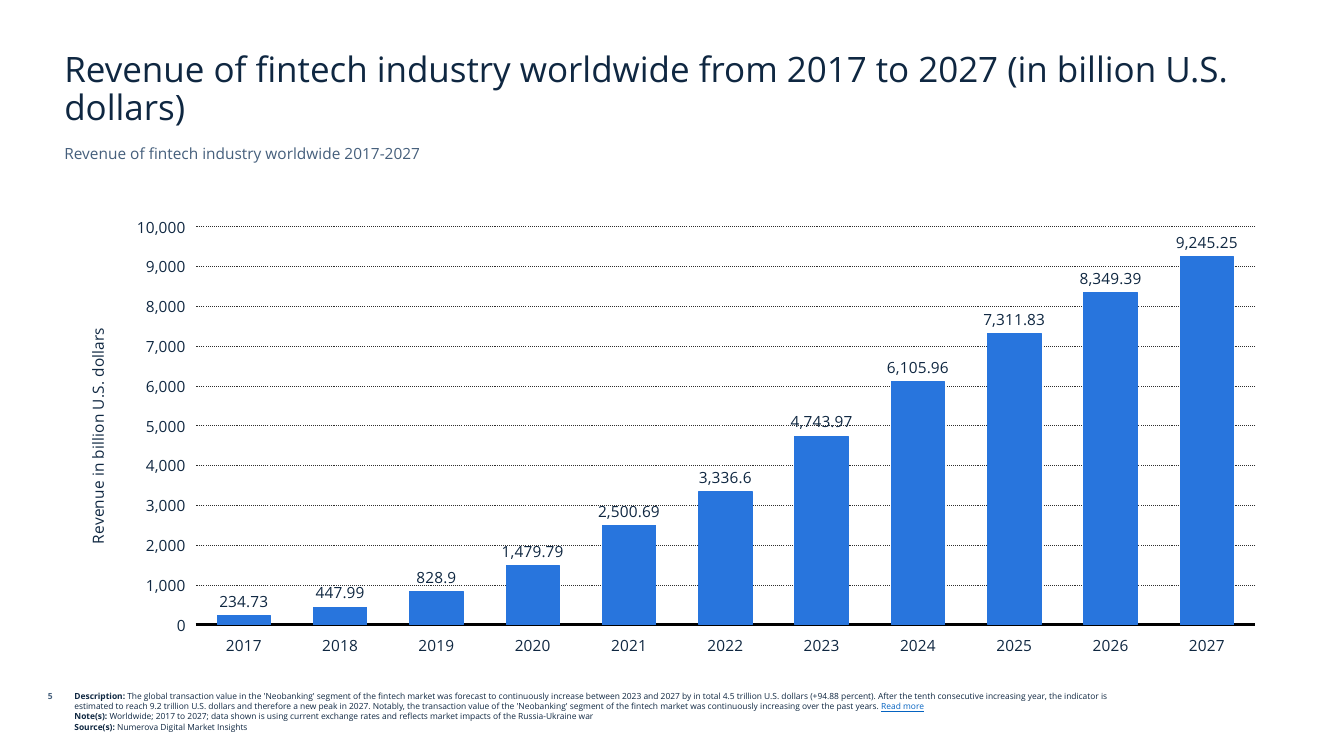
from dataclasses import dataclass

from lxml import etree
from pptx import Presentation
from pptx.chart.data import CategoryChartData
from pptx.dml.color import RGBColor
from pptx.enum.chart import XL_CHART_TYPE, XL_LABEL_POSITION, XL_TICK_LABEL_POSITION, XL_TICK_MARK
from pptx.enum.dml import MSO_LINE
from pptx.enum.text import MSO_ANCHOR, PP_ALIGN
from pptx.oxml.ns import qn
from pptx.util import Inches, Pt

COLUMN = XL_CHART_TYPE.COLUMN_CLUSTERED
OUTSIDE_END = XL_LABEL_POSITION.OUTSIDE_END
LABELS_LOW = XL_TICK_LABEL_POSITION.LOW
NO_TICK = XL_TICK_MARK.NONE
DOTTED = MSO_LINE.ROUND_DOT
TOP, BOTTOM = MSO_ANCHOR.TOP, MSO_ANCHOR.BOTTOM
LEFT, RIGHT = PP_ALIGN.LEFT, PP_ALIGN.RIGHT


@dataclass(frozen=True)
class Theme:
    font: str = "Open Sans"
    ink: str = "0F2741"
    muted: str = "455F7C"
    link: str = "0563C1"
    bar: str = "2875DD"
    axis: str = "000000"
    grid: str = "2F2F2F"
    title_size: float = 25
    body_size: float = 11
    note_size: float = 6


THEME = Theme()

REVENUE = {
    "2017": 234.73, "2018": 447.99, "2019": 828.9, "2020": 1479.79,
    "2021": 2500.69, "2022": 3336.6, "2023": 4743.97, "2024": 6105.96,
    "2025": 7311.83, "2026": 8349.39, "2027": 9245.25,
}

# Each footnote is a list of runs: text and its format values
BOLD = {"bold": True}
FOOTNOTES = [
    [
        ("Description: ", BOLD),
        ("The global transaction value in the 'Neobanking' segment of the fintech market was "
         "forecast to continuously increase between 2023 and 2027 by in total 4.5 trillion U.S. "
         "dollars (+94.88 percent). After the tenth consecutive increasing year, the indicator is "
         "estimated to reach 9.2 trillion U.S. dollars and therefore a new peak in 2027. Notably, "
         "the transaction value of the 'Neobanking' segment of the fintech market was "
         "continuously increasing over the past years. ", {}),
        ("Read more", {"color": THEME.link, "underline": True}),
    ],
    [
        ("Note(s): ", BOLD),
        ("Worldwide; 2017 to 2027; data shown is using current exchange rates and reflects "
         "market impacts of the Russia-Ukraine war", {}),
    ],
    [("Source(s): ", BOLD), ("Numerova Digital Market Insights", {})],
]


def style_font(font, size, color=THEME.ink, **values):
    values = {"name": THEME.font, "size": Pt(size), "bold": False, **values}
    for name, value in values.items():
        setattr(font, name, value)
    font.color.rgb = RGBColor.from_string(color)


def add_text(slide, box, paragraphs, size, color=THEME.ink, anchor=TOP, align=LEFT, spacing=None):
    shape = slide.shapes.add_textbox(*(Inches(length) for length in box))
    frame = shape.text_frame
    frame.word_wrap = True
    frame.vertical_anchor = anchor
    for index, runs in enumerate(paragraphs):
        paragraph = frame.add_paragraph() if index else frame.paragraphs[0]
        paragraph.alignment = align
        paragraph.line_spacing = spacing
        for text, values in runs:
            run = paragraph.add_run()
            run.text = text
            style_font(run.font, size, **{"color": color, **values})


def add_heading(slide, box):
    left, top, width, height = box
    title_height, subtitle_height = 0.86, 0.34
    add_text(slide, (left, top, width, title_height),
             [[("Revenue of fintech industry worldwide from 2017 to 2027 (in billion U.S. dollars)", {})]],
             THEME.title_size, anchor=BOTTOM, spacing=0.9)
    add_text(slide, (left, top + height - subtitle_height, width, subtitle_height),
             [[("Revenue of fintech industry worldwide 2017-2027", {})]],
             THEME.body_size, THEME.muted)


def place_plot(chart, x, y, w, h):
    """Fix the inner plot area, in fractions of the chart."""
    plot_area = chart._chartSpace.chart.plotArea
    for layout in plot_area.findall(qn("c:layout")):
        plot_area.remove(layout)
    layout = etree.Element(qn("c:layout"))
    manual = etree.SubElement(layout, qn("c:manualLayout"))
    values = {"layoutTarget": "inner", "xMode": "edge", "yMode": "edge", "x": x, "y": y, "w": w, "h": h}
    for name, value in values.items():
        etree.SubElement(manual, qn(f"c:{name}")).set("val", str(value))
    plot_area.insert(0, layout)


def style_axes(chart):
    category_axis, value_axis = chart.category_axis, chart.value_axis
    for axis in (category_axis, value_axis):
        axis.major_tick_mark = axis.minor_tick_mark = NO_TICK
        axis.tick_label_position = LABELS_LOW
        style_font(axis.tick_labels.font, THEME.body_size)

    category_axis.format.line.color.rgb = RGBColor.from_string(THEME.axis)
    category_axis.format.line.width = Pt(2)

    scale = {"minimum_scale": 0, "maximum_scale": 10000, "major_unit": 1000, "has_major_gridlines": True}
    for name, value in scale.items():
        setattr(value_axis, name, value)
    value_axis.tick_labels.number_format = "#,##0"
    value_axis.tick_labels.number_format_is_linked = False
    value_axis.format.line.fill.background()
    grid_line = value_axis.major_gridlines.format.line
    grid_line.color.rgb = RGBColor.from_string(THEME.grid)
    grid_line.width = Pt(0.75)
    grid_line.dash_style = DOTTED

    # Upright axis title
    frame = value_axis.axis_title.text_frame
    frame.text = "Revenue in billion U.S. dollars"
    frame._txBody.bodyPr.set("rot", "-5400000")
    frame._txBody.bodyPr.set("vert", "horz")
    style_font(frame.paragraphs[0].runs[0].font, THEME.body_size)


def add_revenue_chart(slide, box):
    data = CategoryChartData(number_format="General")
    data.categories = list(REVENUE)
    data.add_series("Series 1", list(REVENUE.values()))
    chart = slide.shapes.add_chart(COLUMN, *(Inches(length) for length in box), data).chart
    chart.has_legend = chart.has_title = False
    style_font(chart.font, THEME.body_size)
    place_plot(chart, 0.108, 0.042, 0.872, 0.87)
    style_axes(chart)

    # Columns
    plot = chart.plots[0]
    plot.gap_width, plot.overlap, plot.vary_by_categories = 80, -30, False
    column_format = plot.series[0].format
    column_format.fill.solid()
    column_format.fill.fore_color.rgb = RGBColor.from_string(THEME.bar)
    column_format.line.color.rgb = RGBColor.from_string(THEME.bar)
    column_format.line.width = Pt(0.75)

    # Value labels
    labels = plot.series[0].data_labels
    values = {"show_value": True, "position": OUTSIDE_END,
              "number_format": "#,##0.##", "number_format_is_linked": False}
    for name, value in values.items():
        setattr(labels, name, value)
    style_font(labels.font, THEME.body_size)


def add_footer(slide, box):
    left, top, width, height = box
    number_width = 0.62
    add_text(slide, (left, top, number_width, 0.3), [[("5", BOLD)]],
             THEME.note_size, THEME.muted, align=RIGHT)
    add_text(slide, (left + number_width + 0.02, top, width - number_width - 0.02, height),
             FOOTNOTES, THEME.note_size)


def main():
    presentation = Presentation()
    presentation.slide_width, presentation.slide_height = Inches(13.33), Inches(7.5)
    slide = presentation.slides.add_slide(presentation.slide_layouts[6])
    add_heading(slide, (0.54, 0.46, 12.24, 1.26))
    add_revenue_chart(slide, (0.64, 2.06, 12.05, 4.54))
    add_footer(slide, (0, 6.81, 11.11, 0.58))
    presentation.save("out.pptx")


if __name__ == "__main__":
    main()
